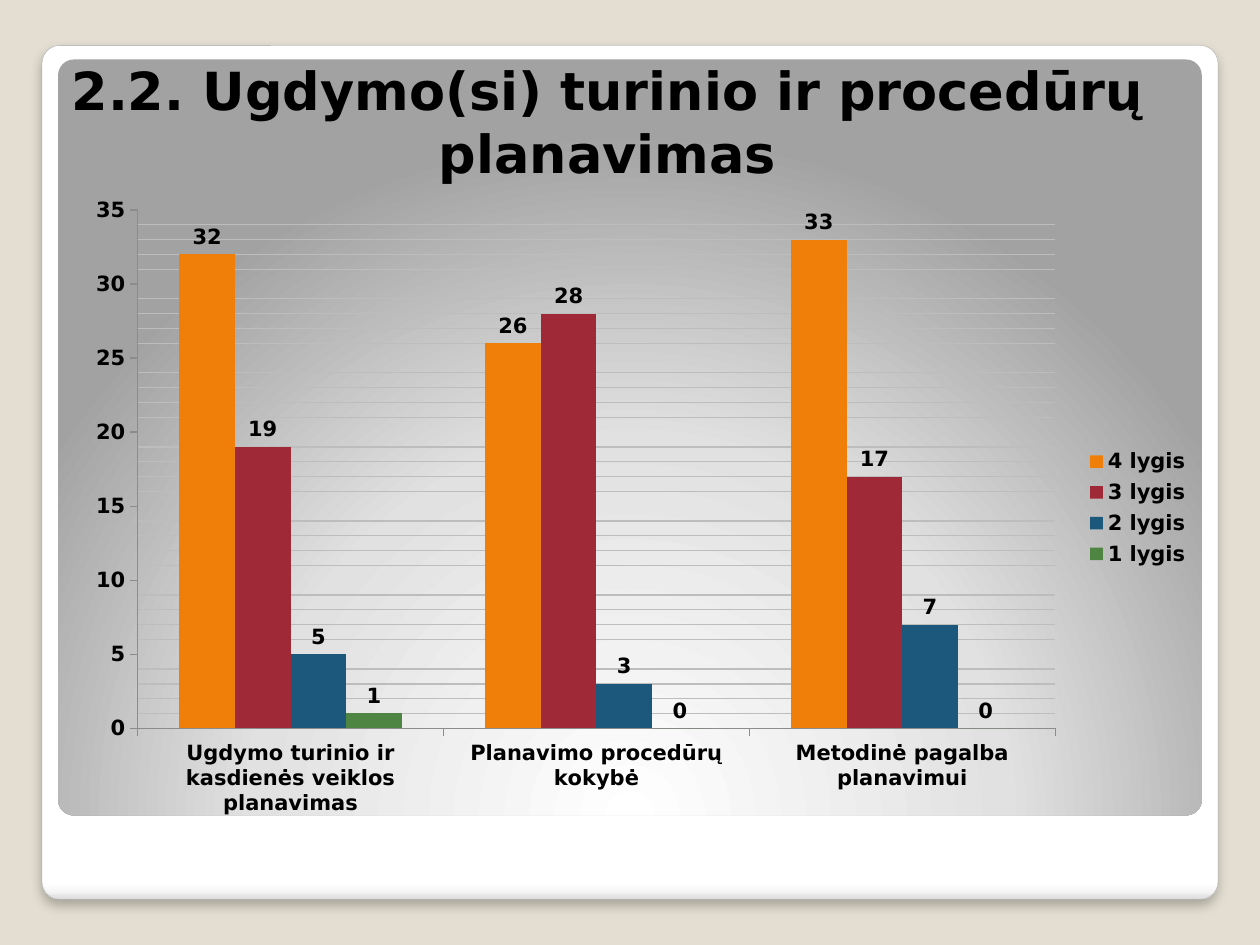
from dataclasses import dataclass

from lxml import etree
from pptx import Presentation
from pptx.chart.data import CategoryChartData
from pptx.dml.color import RGBColor
from pptx.enum import chart as ch, shapes, text
from pptx.oxml import parse_xml
from pptx.oxml.ns import nsdecls, qn
from pptx.util import Pt


@dataclass(frozen=True)
class Theme:
    font: str = "DejaVu Sans"
    title_size: int = 30
    chart_size: int = 12
    ink: str = "000000"
    backdrop: str = "E3DED1"
    outline: str = "A4A4A4"
    axis: str = "8C8C8C"
    grid: str = "BDBDBD"
    levels: tuple = ("F07F09", "9F2936", "1B587C", "4E8542")
    frame_stops: tuple = ((0, "FFFFFF"), (98, "FFFFFF"), (99, "F7F7F7"), (100, "DADADA"))
    panel_stops: tuple = ((0, "FFFFFF"), (55, "E1E1E1"), (100, "A2A2A2"))


THEME = Theme()
DOWNWARD = '<a:lin ang="5400000" scaled="0"/>'
FROM_BELOW = ('<a:path path="circle">'
              '<a:fillToRect l="50000" t="175000" r="50000" b="-75000"/></a:path>')


def rgb(value):
    return RGBColor.from_string(value)


def style_font(font, size):
    font.name = THEME.font
    font.size = Pt(size)
    font.bold = True
    font.color.rgb = rgb(THEME.ink)


def add_rounded_panel(slide, box, stops, direction):
    panel = slide.shapes.add_shape(shapes.MSO_SHAPE.ROUNDED_RECTANGLE, *map(Pt, box))
    panel.adjustments[0] = 0.021
    panel.shadow.inherit = False
    panel.line.fill.background()
    panel.fill.background()
    stop_xml = "".join(f'<a:gs pos="{pos * 1000}"><a:srgbClr val="{color}"/></a:gs>'
                       for pos, color in stops)
    gradient = parse_xml(f'<a:gradFill {nsdecls("a")} rotWithShape="1">'
                         f'<a:gsLst>{stop_xml}</a:gsLst>{direction}</a:gradFill>')
    properties = panel._element.spPr
    properties.replace(properties.find(qn("a:noFill")), gradient)
    return panel


def add_backdrop(slide, box):
    """White frame with a soft shadow, and the grey panel inside it."""
    left, top, width, height = box
    frame = add_rounded_panel(slide, box, THEME.frame_stops, DOWNWARD)
    frame.line.color.rgb = rgb(THEME.outline)
    frame.line.width = Pt(0.16)
    effects = frame._element.spPr.find(qn("a:effectLst"))
    effects.append(parse_xml(
        f'<a:outerShdw {nsdecls("a")} blurRad="{Pt(6)}" dist="{Pt(4)}" dir="5400000" '
        'algn="t" rotWithShape="0"><a:srgbClr val="000000"><a:alpha val="25000"/>'
        '</a:srgbClr></a:outerShdw>'))
    add_rounded_panel(slide, (left + 9.2, top + 8, width - 18.4, 432),
                      THEME.panel_stops, FROM_BELOW)


def place_title(slide, box, wording):
    title = slide.shapes.title
    slide.shapes._spTree.append(title._element)  # bring in front of the panels
    title.left, title.top, title.width, title.height = map(Pt, box)
    frame = title.text_frame
    frame.word_wrap = True
    frame.auto_size = text.MSO_AUTO_SIZE.NONE
    frame.vertical_anchor = text.MSO_ANCHOR.BOTTOM
    paragraph = frame.paragraphs[0]
    paragraph.alignment = text.PP_ALIGN.CENTER
    run = paragraph.add_run()
    run.text = wording
    style_font(run.font, THEME.title_size)


def fix_layout(owner, x, y, w, h, inner=False):
    """Set a manual layout, in fractions of the chart."""
    old = owner.find(qn("c:layout"))
    if old is not None:
        owner.remove(old)
    layout = parse_xml(f'<c:layout {nsdecls("c")}><c:manualLayout/></c:layout>')
    settings = [("layoutTarget", "inner")] if inner else []
    settings += [("xMode", "edge"), ("yMode", "edge"),
                 ("x", x), ("y", y), ("w", w), ("h", h)]
    for tag, value in settings:
        etree.SubElement(layout[0], qn(f"c:{tag}")).set("val", str(value))
    owner.insert(1 if owner.tag == qn("c:legend") else 0, layout)


def add_level_chart(slide, box, categories, levels):
    data = CategoryChartData(number_format="General")
    data.categories = categories
    for name, counts in levels:
        data.add_series(name, counts)
    chart = slide.shapes.add_chart(
        ch.XL_CHART_TYPE.COLUMN_CLUSTERED, *map(Pt, box), data).chart
    chart.has_title = False
    style_font(chart.font, THEME.chart_size)

    # Columns and their values
    plot = chart.plots[0]
    plot.gap_width, plot.overlap, plot.vary_by_categories = 150, 0, False
    for level, color in zip(plot.series, THEME.levels):
        level.format.fill.solid()
        level.format.fill.fore_color.rgb = rgb(color)
        level.invert_if_negative = False
        labels = level.data_labels
        labels.show_value = True
        labels.position = ch.XL_LABEL_POSITION.OUTSIDE_END
        style_font(labels.font, THEME.chart_size)

    # Axes
    counts_axis = chart.value_axis
    counts_axis.minimum_scale, counts_axis.maximum_scale = 0, 35
    counts_axis.major_unit, counts_axis.minor_unit = 5, 1
    counts_axis.has_major_gridlines = False
    counts_axis.has_minor_gridlines = True
    # Minor gridlines have no public formatting object
    grid = counts_axis._element.find(qn("c:minorGridlines"))
    grid.append(parse_xml(
        f'<c:spPr {nsdecls("c", "a")}><a:ln w="{Pt(0.75)}"><a:solidFill>'
        f'<a:srgbClr val="{THEME.grid}"/></a:solidFill></a:ln></c:spPr>'))
    for axis in (chart.category_axis, counts_axis):
        axis.major_tick_mark = ch.XL_TICK_MARK.OUTSIDE
        axis.minor_tick_mark = ch.XL_TICK_MARK.NONE
        axis.format.line.color.rgb = rgb(THEME.axis)
        axis.format.line.width = Pt(0.75)
        style_font(axis.tick_labels.font, THEME.chart_size)

    # Legend and plot area
    chart.has_legend = True
    legend = chart.legend
    legend.position = ch.XL_LEGEND_POSITION.RIGHT
    legend.include_in_layout = False
    style_font(legend.font, THEME.chart_size)
    fix_layout(legend._element, 0.89, 0.4, 0.1, 0.2)
    fix_layout(chart._chartSpace.chart.plotArea, 0.056, 0.038, 0.811, 0.804, inner=True)


def build_planning_slide(deck):
    slide = deck.slides.add_slide(deck.slide_layouts[5])
    slide.background.fill.solid()
    slide.background.fill.fore_color.rgb = rgb(THEME.backdrop)
    add_backdrop(slide, (24, 26, 672, 488))
    place_title(slide, (25, 26, 644.5, 83),
                "2.2. Ugdymo(si) turinio ir procedūrų planavimas")
    add_level_chart(
        slide, (42.5, 106, 646.5, 368.5),
        ["Ugdymo turinio ir kasdienės veiklos planavimas",
         "Planavimo procedūrų kokybė",
         "Metodinė pagalba planavimui"],
        [("4 lygis", (32, 26, 33)), ("3 lygis", (19, 28, 17)),
         ("2 lygis", (5, 3, 7)), ("1 lygis", (1, 0, 0))])


def main():
    deck = Presentation()
    deck.slide_width, deck.slide_height = Pt(720), Pt(540)
    build_planning_slide(deck)
    deck.save("out.pptx")


if __name__ == "__main__":
    main()
